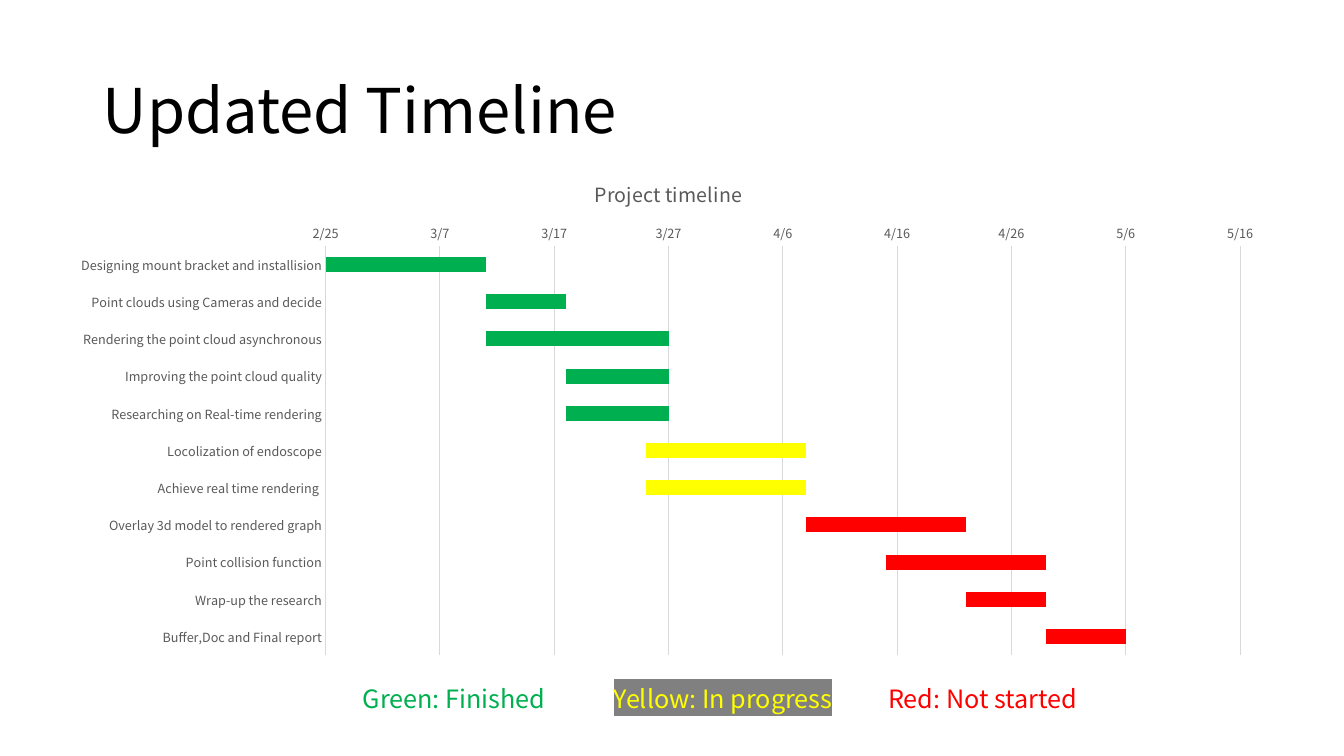
"""Build the Updated Timeline slide with its Gantt chart and colour key."""
from dataclasses import dataclass

from lxml.etree import SubElement
from pptx import Presentation
from pptx.chart.data import CategoryChartData
from pptx.dml.color import RGBColor
from pptx.enum.chart import XL_CHART_TYPE, XL_TICK_MARK
from pptx.enum.text import MSO_ANCHOR
from pptx.oxml import parse_xml
from pptx.oxml.ns import nsdecls, qn
from pptx.util import Inches, Pt


@dataclass(frozen=True)
class Theme:
    font: str = "Noto Sans CJK SC"
    black: str = "000000"
    label: str = "595959"
    grid: str = "D9D9D9"
    green: str = "00B050"
    yellow: str = "FFFF00"
    red: str = "FF0000"
    gray: str = "808080"
    heading_size: int = 44
    key_size: int = 18
    chart_title_size: int = 14
    chart_size: int = 10
    axis_size: int = 9
    line_width: float = 0.75


THEME = Theme()
HEADING = "Updated Timeline"
CHART_TITLE = "Project timeline"
FIRST_DAY, LAST_DAY, DAY_STEP = 44617, 44697, 10
TASKS = [
    ("Designing mount bracket and installision", 44617, 14, THEME.green),
    ("Point clouds using Cameras and decide", 44631, 7, THEME.green),
    ("Rendering the point cloud asynchronous", 44631, 16, THEME.green),
    ("Improving the point cloud quality", 44638, 9, THEME.green),
    ("Researching on Real-time rendering", 44638, 9, THEME.green),
    ("Locolization of endoscope", 44645, 14, THEME.yellow),
    ("Achieve real time rendering ", 44645, 14, THEME.yellow),
    ("Overlay 3d model to rendered graph", 44659, 14, THEME.red),
    ("Point collision function", 44666, 14, THEME.red),
    ("Wrap-up the research", 44673, 7, THEME.red),
    ("Buffer,Doc and Final report", 44680, 7, THEME.red),
]
KEY = [
    ("Green: Finished", THEME.green, None, 2.12),
    ("Yellow: In progress", THEME.yellow, THEME.gray, 4.61),
    ("Red: Not started", THEME.red, None, 7.33),
]
HEADING_AREA = (0.92, 0.4, 11.5, 1.45)
KEY_AREA = (1.38, 6.73, 9.79, 0.4)
CHART_AREA = (0.58, 1.57, 12.1, 5.03)
PLOT_AREA = (3.23, 2.44, 9.07, 4.06)


def style_font(font, size, color):
    font.name = THEME.font
    font.size = Pt(size)
    font.bold = False
    font.color.rgb = RGBColor.from_string(color)


def add_span(para, text, *, size, color, highlight=None):
    span = para.add_run()
    span.text = text
    style_font(span.font, size, color)
    if highlight:
        marker = parse_xml(
            f'<a:highlight {nsdecls("a")}><a:srgbClr val="{highlight}"/></a:highlight>'
        )
        span.font.fill
        span._r.rPr.find(qn("a:solidFill")).addnext(marker)


def add_box(page, area, anchor=MSO_ANCHOR.TOP):
    frame = page.shapes.add_textbox(*map(Inches, area)).text_frame
    frame.word_wrap = True
    frame.vertical_anchor = anchor
    return frame.paragraphs[0]


def add_key(page):
    para = add_box(page, KEY_AREA)
    stops = SubElement(para._p.get_or_add_pPr(), qn("a:tabLst"))
    for text, color, highlight, position in KEY:
        SubElement(stops, qn("a:tab"), pos=str(Inches(position)), algn="l")
        add_span(para, "\t", size=THEME.key_size, color=color)
        add_span(para, text, size=THEME.key_size, color=color, highlight=highlight)


def place_plot(chart):
    left, top, width, height = CHART_AREA
    plot_left, plot_top, plot_width, plot_height = PLOT_AREA
    fractions = {
        "x": (plot_left - left) / width,
        "y": (plot_top - top) / height,
        "w": plot_width / width,
        "h": plot_height / height,
    }
    modes = "".join(f'<c:{side}Mode val="edge"/>' for side in "xy")
    values = "".join(f'<c:{side} val="{part:.4f}"/>' for side, part in fractions.items())
    plot_area = chart._chartSpace.chart.plotArea
    for layout in plot_area.findall(qn("c:layout")):
        plot_area.remove(layout)
    plot_area.insert(0, parse_xml(
        f'<c:layout {nsdecls("c")}><c:manualLayout><c:layoutTarget val="inner"/>'
        f"{modes}{values}</c:manualLayout></c:layout>"
    ))


def style_line(line):
    line.color.rgb = RGBColor.from_string(THEME.grid)
    line.width = Pt(THEME.line_width)


def style_axes(chart):
    tasks, days = chart.category_axis, chart.value_axis
    for axis in (tasks, days):
        axis.major_tick_mark = axis.minor_tick_mark = XL_TICK_MARK.NONE
        style_font(axis.tick_labels.font, THEME.axis_size, THEME.label)
    tasks.reverse_order = True
    tasks.has_major_gridlines = False
    style_line(tasks.format.line)
    days.minimum_scale, days.maximum_scale = FIRST_DAY, LAST_DAY
    days.major_unit = DAY_STEP
    days.has_major_gridlines = True
    style_line(days.major_gridlines.format.line)
    days.format.line.fill.background()
    days.tick_labels.number_format = "m/d;@"
    days.tick_labels.number_format_is_linked = False


def add_timeline(page):
    names, starts, lengths, colors = zip(*TASKS)
    data = CategoryChartData()
    data.categories = names
    data.add_series("Series 1", starts)
    data.add_series("Series 2", lengths)
    chart = page.shapes.add_chart(
        XL_CHART_TYPE.BAR_STACKED, *map(Inches, CHART_AREA), data
    ).chart
    style_font(chart.font, THEME.chart_size, THEME.black)
    chart.has_legend = False
    chart.has_title = True
    add_span(chart.chart_title.text_frame.paragraphs[0], CHART_TITLE,
             size=THEME.chart_title_size, color=THEME.label)
    chart.chart_title.include_in_layout = False
    plot = chart.plots[0]
    plot.vary_by_categories = False
    plot.gap_width, plot.overlap = 150, 100
    start_series, length_series = plot.series
    start_series.format.fill.background()
    for index, color in enumerate(colors):
        fill = length_series.points[index].format.fill
        fill.solid()
        fill.fore_color.rgb = RGBColor.from_string(color)
    style_axes(chart)
    place_plot(chart)


def main():
    deck = Presentation()
    deck.slide_width, deck.slide_height = Inches(13.33), Inches(7.5)
    page = deck.slides.add_slide(deck.slide_layouts[6])
    heading = add_box(page, HEADING_AREA, MSO_ANCHOR.MIDDLE)
    heading.line_spacing = 0.9
    add_span(heading, HEADING, size=THEME.heading_size, color=THEME.black)
    add_key(page)
    add_timeline(page)
    deck.save("out.pptx")


if __name__ == "__main__":
    main()
